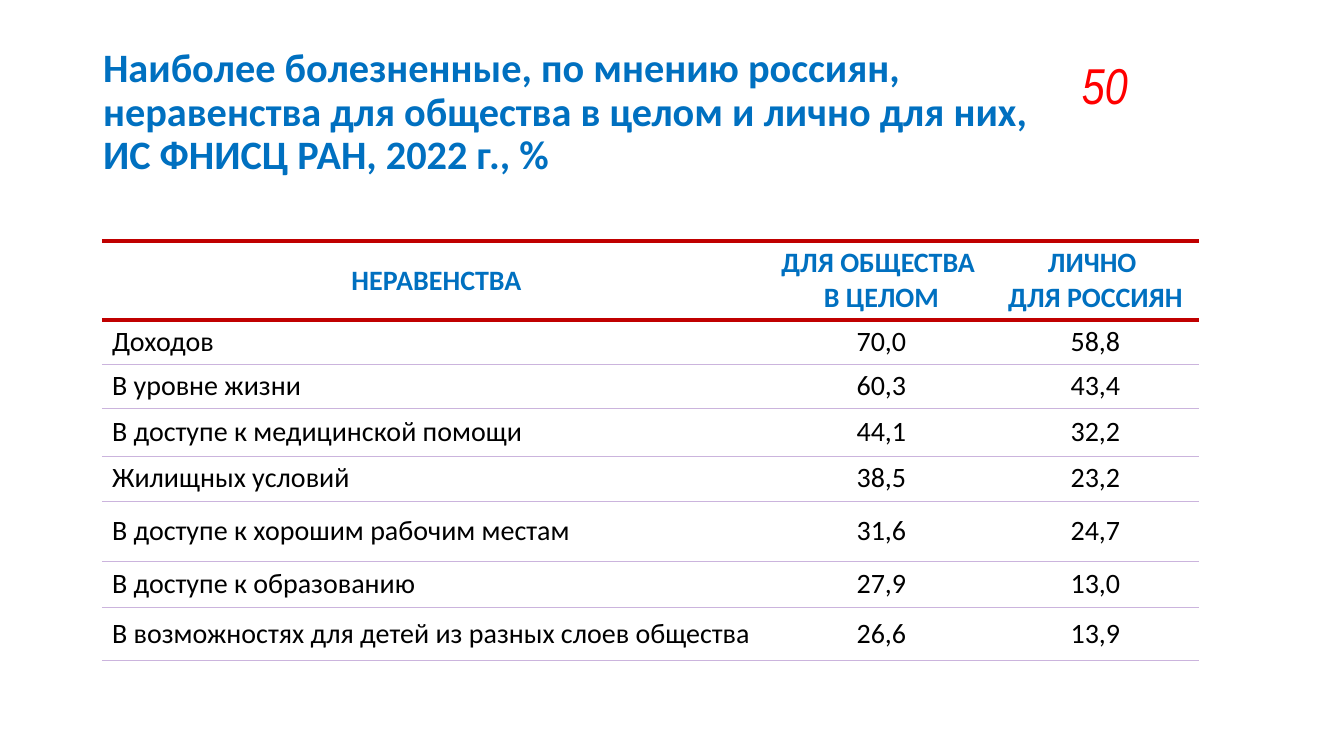
"""Build a slide with a table of the inequalities that trouble Russians most."""
import pptx
import pptx.util
import pptx.dml.color
import pptx.enum.text
import pptx.oxml

TITLE = ("Наиболее болезненные, по мнению россиян, неравенства для общества "
         "в целом и лично для них,\vИС ФНИСЦ РАН, 2022 г., %")
NUMBER = "50"
ROWS = [
    ("НЕРАВЕНСТВА", "ДЛЯ ОБЩЕСТВА \vВ ЦЕЛОМ", "ЛИЧНО \vДЛЯ РОССИЯН"),
    ("Доходов", "70,0", "58,8"),
    ("В уровне жизни", "60,3", "43,4"),
    ("В доступе к медицинской помощи", "44,1", "32,2"),
    ("Жилищных условий", "38,5", "23,2"),
    ("В доступе к хорошим рабочим местам", "31,6", "24,7"),
    ("В доступе к образованию", "27,9", "13,0"),
    ("В возможностях для детей из разных слоев общества", "26,6", "13,9"),
]
WIDTHS = [669, 221, 207]
HEIGHTS = [79, 44, 44, 48, 45, 60, 46, 54]
BLUE, RED, BLACK = "0070C0", "FF0000", "000000"
THICK, THIN = ("C00000", 3), ("CBB4DD", 0.5)
HEAD = {"name": "Calibri", "size": 20, "bold": True, "color": BLUE}
BODY = {**HEAD, "bold": False, "color": BLACK}
ALIGN = pptx.enum.text.PP_ALIGN
MIDDLE = pptx.enum.text.MSO_ANCHOR.MIDDLE


def px(count):
    return pptx.util.Emu(round(count * 12192000 / 1344))


def paint(color, code):
    color.rgb = pptx.dml.color.RGBColor.from_string(code)


def style(para, form, **layout):
    for key, value in form.items():
        if key == "color":
            paint(para.font.color, value)
        else:
            setattr(para.font, key, pptx.util.Pt(value) if key == "size" else value)
    for key, value in layout.items():
        setattr(para, key, value)


def border(cell, side, line):
    code, width = line or (None, 0)
    fill = f'<a:solidFill><a:srgbClr val="{code}"/></a:solidFill>' if line else "<a:noFill/>"
    cell._tc.get_or_add_tcPr().append(pptx.oxml.parse_xml(
        f'<a:ln{side} xmlns:a="http://schemas.openxmlformats.org/drawingml/2006/main" '
        f'w="{pptx.util.Pt(width)}">{fill}</a:ln{side}>'))


def add_title(slide):
    title = slide.shapes.title
    title.left, title.top, title.width, title.height = map(px, (93, 40, 959, 146))
    frame = title.text_frame
    frame.text = TITLE
    frame.word_wrap = True
    frame.auto_size = pptx.enum.text.MSO_AUTO_SIZE.NONE
    frame.vertical_anchor = MIDDLE
    style(frame.paragraphs[0], {**HEAD, "size": 28.8},
          alignment=ALIGN.LEFT, line_spacing=0.9)


def add_number(slide):
    frame = slide.shapes.add_textbox(*map(px, (1072, 45, 75, 73))).text_frame
    frame.text = NUMBER
    frame.word_wrap = True
    form = {"name": "Arial Narrow", "size": 36, "italic": True, "color": RED}
    style(frame.paragraphs[0], form, line_spacing=1.07, space_after=pptx.util.Pt(8))


def add_grid(slide):
    box = map(px, (102, 241, sum(WIDTHS), sum(HEIGHTS)))
    table = slide.shapes.add_table(len(ROWS), len(WIDTHS), *box).table
    table.first_row = table.horz_banding = False
    for col, width in zip(table.columns, WIDTHS):
        col.width = px(width)
    for r, (texts, height) in enumerate(zip(ROWS, HEIGHTS)):
        table.rows[r].height = px(height)
        lines = {"L": None, "R": None, "T": THICK if r < 2 else THIN,
                 "B": THIN if r else THICK}
        for c, text in enumerate(texts):
            cell = table.cell(r, c)
            cell.text_frame.text = text
            cell.vertical_anchor = MIDDLE
            for side, line in lines.items():
                border(cell, side, line)
            cell.fill.background()
            style(cell.text_frame.paragraphs[0], BODY if r else HEAD,
                  alignment=ALIGN.LEFT if r and not c else ALIGN.CENTER)


def main():
    deck = pptx.Presentation()
    deck.slide_width, deck.slide_height = px(1344), px(756)
    slide = deck.slides.add_slide(deck.slide_layouts[5])
    add_number(slide)
    add_title(slide)
    add_grid(slide)
    deck.save("out.pptx")


if __name__ == "__main__":
    main()
